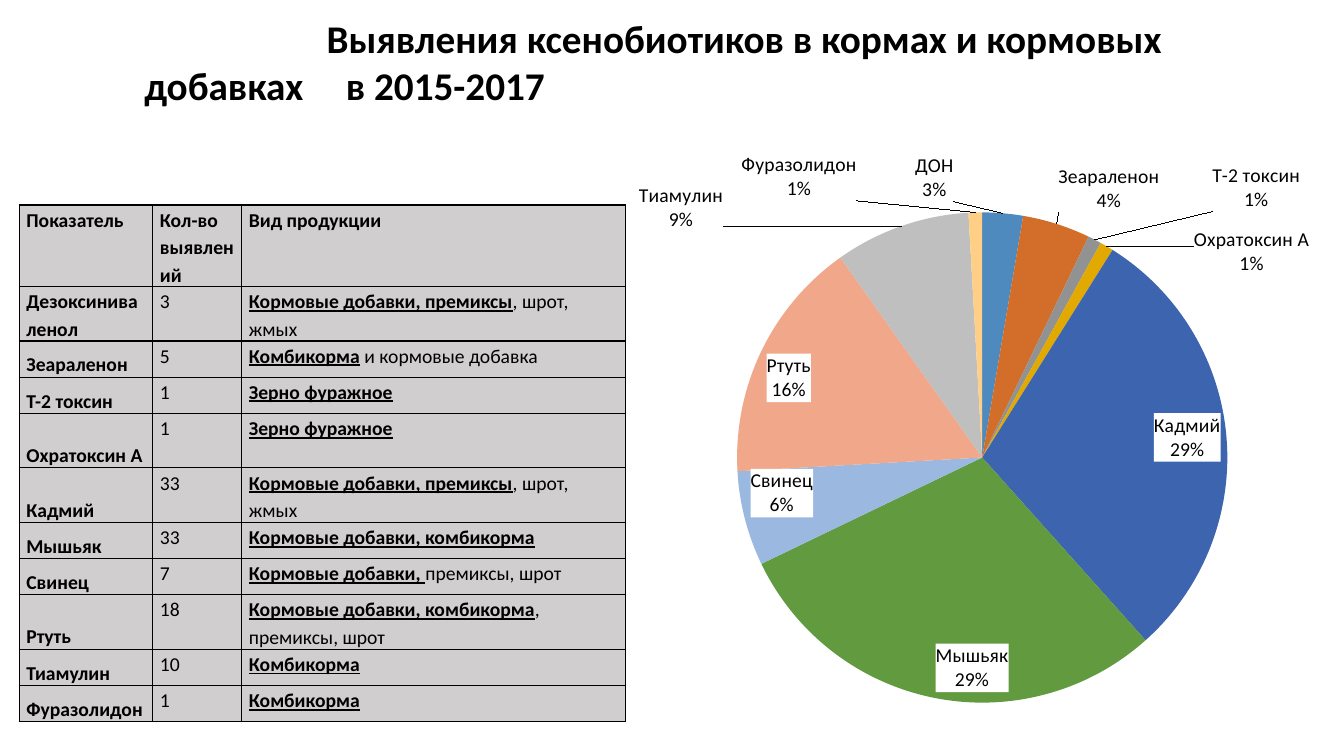
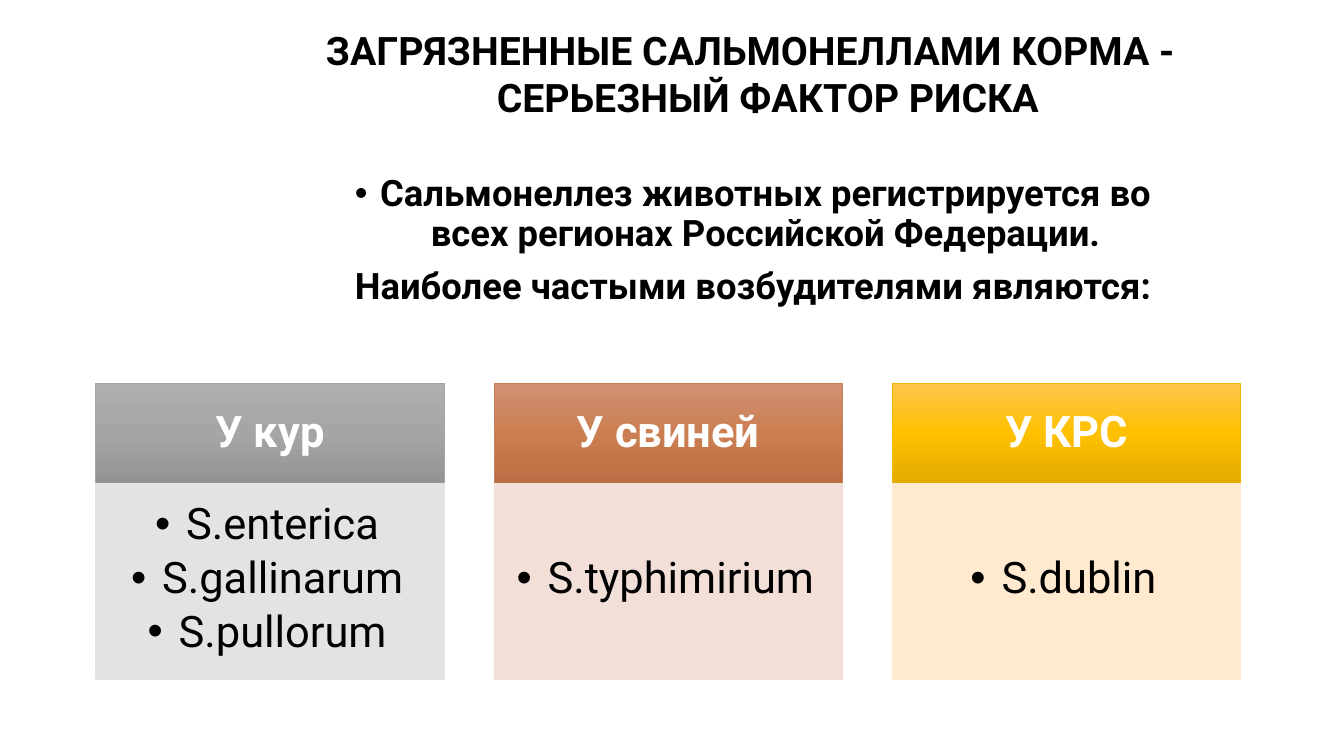
import copy

import pptx
import pptx.chart.data
import pptx.dml.color
import pptx.enum.chart
import pptx.enum.shapes
import pptx.enum.text
import pptx.oxml
import pptx.oxml.ns
import pptx.util

COLS, ROWS = 160, 90
ALIGN = pptx.enum.text.PP_ALIGN
ANCHOR = pptx.enum.text.MSO_ANCHOR
BLACK, WHITE, GREY = "000000", "FFFFFF", "D0CECE"
CALIBRI, ROBOTO = "Calibri", "Roboto"


def rgb(code):
    return pptx.dml.color.RGBColor.from_string(code)


def unit(num):
    """Turn grid steps into a length; a step is a twelfth of an inch."""
    return pptx.util.Inches(num / 12)


def node(tag, body="", **attrs):
    """Make a drawing or chart element from a prefixed tag and inner XML."""
    given = "".join(f' {key}="{val}"' for key, val in attrs.items())
    spaces = pptx.oxml.ns.nsdecls("a", "c")
    return pptx.oxml.parse_xml(f"<{tag} {spaces}{given}>{body}</{tag}>")


class Deck:
    def __init__(self):
        self.show = pptx.Presentation()
        self.show.slide_width = unit(COLS)
        self.show.slide_height = unit(ROWS)
        self.slide = None

    def page(self):
        self.slide = self.show.slides.add_slide(self.show.slide_layouts[6])

    def para(self, frame, runs, first=False, size=14, face=CALIBRI,
             color=BLACK, bold=False, align=ALIGN.LEFT, space=1.0, before=0,
             left=0, indent=0, bullet=None, tab=None):
        """Add a paragraph; runs are (text, marks), marks holding b and u."""
        par = frame.paragraphs[0] if first else frame.add_paragraph()
        par.alignment, par.line_spacing = align, space
        par.space_before = pptx.util.Pt(0 if first else before)
        props = par._p.get_or_add_pPr()
        props.set("marL", str(unit(left)))
        props.set("indent", str(unit(indent)))
        if bullet:
            props.append(node("a:buFont", typeface="Arial"))
            props.append(node("a:buChar", char=bullet))
        else:
            props.append(node("a:buNone"))
        if tab:
            stops = node("a:tabLst")
            stops.append(node("a:tab", pos=unit(tab), algn="l"))
            props.append(stops)
        for text, marks in runs:
            run = par.add_run()
            run.text = text
            font = run.font
            font.name, font.size = face, pptx.util.Pt(size)
            font.bold = bold or "b" in marks
            font.underline = "u" in marks
            font.color.rgb = rgb(color)

    def lines(self, frame, texts, anchor=ANCHOR.TOP, **style):
        frame.word_wrap = True
        frame.vertical_anchor = anchor
        for num, text in enumerate(texts):
            self.para(frame, [(text, "")], first=num == 0, **style)

    def text(self, place):
        box = self.slide.shapes.add_textbox(*map(unit, place))
        box.text_frame.word_wrap = True
        return box.text_frame

    def title(self, text, place, **style):
        self.lines(self.text(place), [text], size=28, bold=True, **style)

    def panel(self, place, fills, edge):
        """Draw a rectangle, plain or with a gradient from top to bottom."""
        kind = pptx.enum.shapes.MSO_SHAPE.RECTANGLE
        box = self.slide.shapes.add_shape(kind, *map(unit, place))
        box.shadow.inherit = False
        box.line.color.rgb = rgb(edge)
        box.line.width = pptx.util.Pt(0.5)
        if len(fills) == 1:
            box.fill.solid()
            box.fill.fore_color.rgb = rgb(fills[0])
        else:
            box.fill.gradient()
            box.fill.gradient_angle = 270
            stops = next(box._element.spPr.iter(pptx.oxml.ns.qn("a:gsLst")))
            while len(stops) < len(fills):
                stops.insert(1, copy.deepcopy(stops[0]))
            for num, stop in enumerate(box.fill.gradient_stops):
                stop.color.rgb = rgb(fills[num])
                stop.position = num / (len(fills) - 1)
        return box.text_frame

    def cell(self, cell, runs, anchor):
        cell.margin_left = cell.margin_right = unit(0.84)
        cell.margin_top = cell.margin_bottom = 0
        cell.vertical_anchor = anchor
        cell.fill.solid()
        cell.fill.fore_color.rgb = rgb(GREY)
        props = cell._tc.get_or_add_tcPr()
        ink = f'<a:solidFill><a:srgbClr val="{BLACK}"/></a:solidFill>'
        for num, side in enumerate("LRTB"):
            props.insert(num, node(f"a:ln{side}", ink, w=pptx.util.Pt(1)))
        self.para(cell.text_frame, runs, first=True, space=1.15)

    def table(self, rows, left, top, wides, highs):
        """Rows hold cells, each a list of runs."""
        frame = self.slide.shapes.add_table(
            len(rows), len(wides), unit(left), unit(top),
            unit(sum(wides)), unit(sum(highs)))
        grid = frame.table
        for col, wide in zip(grid.columns, wides):
            col.width = unit(wide)
        for row, high in zip(grid.rows, highs):
            row.height = unit(high)
        for y, row in enumerate(rows):
            for x, runs in enumerate(row):
                low = y > 0 and x == 0
                self.cell(grid.cell(y, x), runs,
                          ANCHOR.BOTTOM if low else ANCHOR.TOP)

    def pie(self, names, vals, hues, shifts, place, plot):
        """Shifts move labels out of the pie, plot is its share of the frame."""
        data = pptx.chart.data.CategoryChartData()
        data.categories = names
        data.add_series("Выявления", vals)
        chart = self.slide.shapes.add_chart(
            pptx.enum.chart.XL_CHART_TYPE.PIE, *map(unit, place), data).chart
        chart.has_legend = chart.has_title = False
        chart.font.name, chart.font.size = CALIBRI, pptx.util.Pt(14)
        chart.font.color.rgb = rgb(BLACK)
        chart.plots[0].vary_by_categories = True
        series = chart.plots[0].series[0]
        for num, hue in enumerate(hues):
            fill = series.points[num].format.fill
            fill.solid()
            fill.fore_color.rgb = rgb(hue)
        area = chart._chartSpace.chart.plotArea
        for old in area.findall(pptx.oxml.ns.qn("c:layout")):
            area.remove(old)
        mode = ('<c:layoutTarget val="inner"/><c:xMode val="edge"/>'
                '<c:yMode val="edge"/>')
        area.insert(0, self.layout(mode, zip("xywh", plot)))
        self.labels(series, shifts)

    def layout(self, mode, parts):
        body = "".join(f'<c:{key} val="{val}"/>' for key, val in parts)
        return node("c:layout",
                    f"<c:manualLayout>{mode}{body}</c:manualLayout>")

    def labels(self, series, shifts):
        back = (f'<c:spPr><a:solidFill><a:srgbClr val="{WHITE}"/>'
                '</a:solidFill></c:spPr>')
        flags = "".join(
            f'<c:show{key} val="{val}"/>' for key, val in
            (("LegendKey", 0), ("Val", 0), ("CatName", 1), ("SerName", 0),
             ("Percent", 1), ("BubbleSize", 0)))
        flags += "<c:separator>\n</c:separator>"
        group = node("c:dLbls", f'{back}<c:dLblPos val="inEnd"/>{flags}'
                     '<c:showLeaderLines val="1"/>')
        for spot, (num, shift) in enumerate(shifts.items()):
            label = node("c:dLbl", f'<c:idx val="{num}"/>'
                         f'<c:dLblPos val="outEnd"/>{flags}')
            label.insert(1, self.layout("", zip("xy", shift)))
            group.insert(spot, label)
        series._element.find(pptx.oxml.ns.qn("c:cat")).addprevious(group)


# Name, count, leading products, further products, row height
FINDS = [
    ("Дезоксиниваленол", 3, "Кормовые добавки, премиксы", ", шрот, жмых", 6.5),
    ("Зеараленон", 5, "Комбикорма", " и кормовые добавка", 4.3),
    ("Т-2 токсин", 1, "Зерно фуражное", "", 4.3),
    ("Охратоксин А", 1, "Зерно фуражное", "", 6.5),
    ("Кадмий", 33, "Кормовые добавки, премиксы", ", шрот, жмых", 6.5),
    ("Мышьяк", 33, "Кормовые добавки, комбикорма", "", 4.3),
    ("Свинец", 7, "Кормовые добавки, ", "премиксы, шрот", 4.3),
    ("Ртуть", 18, "Кормовые добавки, комбикорма", ", премиксы, шрот", 6.5),
    ("Тиамулин", 10, "Комбикорма", "", 4.3),
    ("Фуразолидон", 1, "Комбикорма", "", 4.3),
]
HUES = ["4F8ABE", "D26E2A", "929292", "E2AA00", "3D65AF",
        "629A3F", "9AB8E0", "F1A78A", "BFBFBF", "FFCF85"]
SHIFTS = {0: (-0.09, -0.01), 1: (0, -0.01), 2: (0.15, -0.04),
          3: (0.11, 0.06), 8: (-0.23, 0.02), 9: (-0.23, -0.01)}

# Heading, germs, gradient, edge, pale fill
CARDS = [
    ("У кур", ["S.enteriсa", "S.gallinarum", "S.pullorum"],
     ["AFAFAF", "A5A5A5", "939393"], "A5A5A5", "E3E3E3"),
    ("У свиней", ["S.typhimirium"],
     ["CF9072", "CB7E51", "BB6E43"], "C97F58", "F2DFD8"),
    ("У КРС", ["S.dublin"],
     ["FFC54B", "FFC000", "E3AB00"], "F5B800", "FFEACF"),
]


def finds(deck):
    deck.page()
    deck.title("Выявления ксенобиотиков в кормах и кормовых добавках\t"
               "в 2015-2017", (16, 0, 140.8, 14.6), anchor=ANCHOR.MIDDLE,
               indent=21.7, tab=72.1)
    names = ["ДОН"] + [find[0] for find in FINDS[1:]]
    deck.pie(names, [find[1] for find in FINDS], HUES, SHIFTS,
             (68.6, 16.8, 91.2, 68.5), (0.21, 0.12, 0.64, 0.86))
    heads = ("Показатель", "Кол-во выявлений", "Вид продукции")
    rows = [[[(head, "b")] for head in heads]]
    for name, count, lead, rest, _ in FINDS:
        kinds = [(lead, "bu")] + ([(rest, "")] if rest else [])
        rows.append([[(name, "b")], [(str(count), "")], kinds])
    deck.table(rows, 2.3, 24.4, [15.9, 10.6, 45.7],
               [9.7] + [find[-1] for find in FINDS])


def germs(deck):
    deck.page()
    deck.title("ЗАГРЯЗНЕННЫЕ САЛЬМОНЕЛЛАМИ КОРМА - СЕРЬЕЗНЫЙ ФАКТОР РИСКА",
               (29.3, 2.5, 120, 19.3), face=ROBOTO, align=ALIGN.CENTER,
               left=4.2, indent=-4.2)
    body = deck.text((37.7, 20.3, 104, 19))
    style = dict(size=26, face=ROBOTO, bold=True, align=ALIGN.CENTER,
                 space=0.9, before=10, left=3, indent=-3)
    deck.para(body, [("Сальмонеллез животных регистрируется во всех регионах "
                      "Российской Федерации.", "")], first=True, bullet="•",
              **style)
    deck.para(body, [("Наиболее частыми возбудителями являются:", "")],
              **style)
    style = dict(size=31, face=ROBOTO, align=ALIGN.CENTER, space=0.9,
                 anchor=ANCHOR.MIDDLE)
    wide, pitch, top, high, deep = 41.5, 47.4, 45.7, 11.8, 23.4
    for num, (head, kinds, fills, edge, pale) in enumerate(CARDS):
        left = 11.4 + num * pitch
        frame = deck.panel((left, top, wide, high), fills, edge)
        deck.lines(frame, [head], color=WHITE, bold=True, **style)
        frame = deck.panel((left, top + high, wide, deep), [pale], pale)
        frame.margin_left, frame.margin_right = unit(2.2), unit(2.9)
        frame.margin_top, frame.margin_bottom = unit(2.4), unit(2.8)
        deck.lines(frame, kinds, before=5, left=3.7, indent=-3.7, bullet="•",
                   **style)


def main():
    deck = Deck()
    finds(deck)
    germs(deck)
    deck.show.save("out.pptx")


if __name__ == "__main__":
    main()
